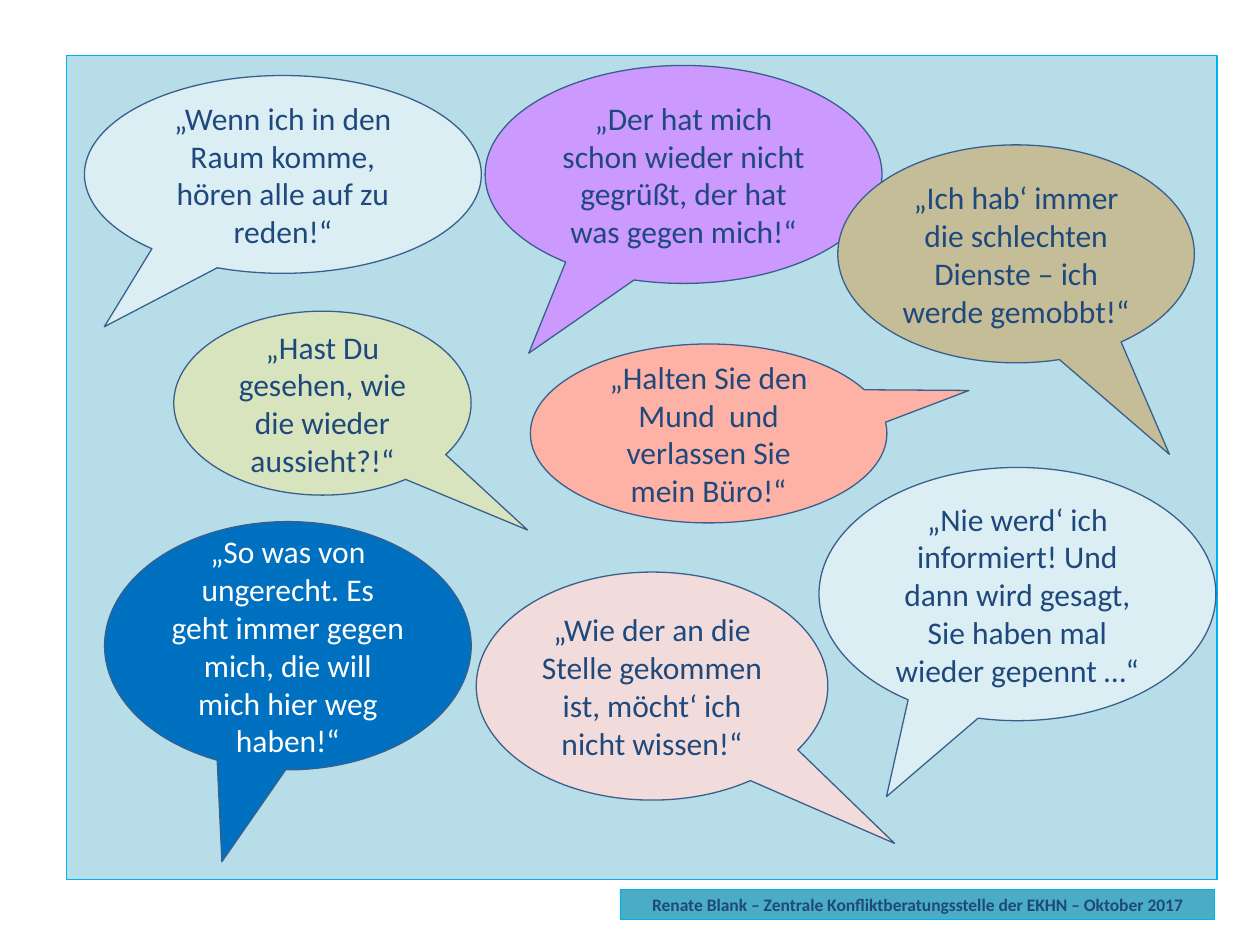
from dataclasses import dataclass

import pptx
import pptx.dml.color
import pptx.enum.shapes
import pptx.enum.text
import pptx.util

COLUMNS, ROWS = 100, 75
SLIDE_WIDTH = pptx.util.Inches(10)
SLIDE_HEIGHT = pptx.util.Inches(7.5)
SHAPES = pptx.enum.shapes.MSO_SHAPE
FONT = "Calibri"
NAVY, WHITE = "1F497D", "FFFFFF"
PALE_BLUE, SKY = "DBEEF4", "00B0F0"
BUBBLE_LINE = "3A5F8C"


@dataclass(frozen=True)
class Area:
    column: float
    row: float
    columns: float
    rows: float


@dataclass(frozen=True)
class Bubble:
    quote: str
    area: Area
    tip: tuple[float, float]
    fill: str
    ink: str = NAVY


BACKDROP = Area(5.3, 4.4, 91.3, 65.4)
FOOTER = Area(49.2, 70.6, 47.2, 2.4)
FOOTER_TEXT = "Renate Blank – Zentrale Konfliktberatungsstelle der EKHN – Oktober 2017"

BUBBLES = [
    Bubble("„Wenn ich in den Raum komme, hören alle auf zu reden!“",
           Area(6.7, 6, 31.5, 15.7), (-0.45, 0.77), PALE_BLUE),
    Bubble("„So was von ungerecht. Es geht immer gegen mich, die will mich hier weg haben!“",
           Area(8.3, 41.4, 29.1, 19.7), (-0.18, 0.87), "0070C0", WHITE),
    Bubble("„Hast Du gesehen, wie die wieder aussieht?!“",
           Area(13.8, 24.7, 23.6, 14.6), (0.69, 0.69), "D7E4BD"),
    Bubble("„Der hat mich schon wieder nicht gegrüßt, der hat was gegen mich!“",
           Area(38.5, 5.2, 31.5, 17.3), (-0.39, 0.82), "CC99FF"),
    Bubble("„Ich hab‘ immer die schlechten Dienste – ich werde gemobbt!“",
           Area(66.5, 11.5, 28.3, 17.3), (0.43, 0.92), "C4BD97"),
    Bubble("„Wie der an die Stelle gekommen ist, möcht‘ ich nicht wissen!“",
           Area(37.8, 45.4, 27.9, 18.1), (0.69, 0.69), "F2DCDB"),
    Bubble("„Nie werd‘ ich informiert! Und dann wird gesagt, Sie haben mal wieder gepennt …“",
           Area(65, 37.1, 31.5, 20.1), (-0.33, 0.8), PALE_BLUE),
    Bubble("„Halten Sie den Mund  und verlassen Sie mein Büro!“",
           Area(42.1, 27.3, 28.3, 14.2), (0.73, -0.24), "FDB2A5"),
]


def color(value: str) -> pptx.dml.color.RGBColor:
    return pptx.dml.color.RGBColor.from_string(value)


def across(columns: float) -> int:
    return round(SLIDE_WIDTH * columns / COLUMNS)


def down(rows: float) -> int:
    return round(SLIDE_HEIGHT * rows / ROWS)


def draw_panel(slide, preset, area: Area, fill: str, line: str, line_width: float):
    panel = slide.shapes.add_shape(
        preset, across(area.column), down(area.row), across(area.columns), down(area.rows)
    )
    panel.shadow.inherit = False
    panel.fill.solid()
    panel.fill.fore_color.rgb = color(fill)
    panel.line.color.rgb = color(line)
    panel.line.width = pptx.util.Pt(line_width)
    return panel


def write(panel, wording: str, size: float, ink: str, bold: bool = False) -> None:
    frame = panel.text_frame
    frame.word_wrap = True
    frame.vertical_anchor = pptx.enum.text.MSO_ANCHOR.MIDDLE
    paragraph = frame.paragraphs[0]
    paragraph.alignment = pptx.enum.text.PP_ALIGN.CENTER
    run = paragraph.add_run()
    run.text = wording
    run.font.name = FONT
    run.font.size = pptx.util.Pt(size)
    run.font.bold = bold
    run.font.color.rgb = color(ink)


def draw_bubble(slide, bubble: Bubble) -> None:
    callout = draw_panel(
        slide, SHAPES.OVAL_CALLOUT, bubble.area, bubble.fill, BUBBLE_LINE, 0.75
    )
    callout.adjustments[0], callout.adjustments[1] = bubble.tip
    write(callout, bubble.quote, 18, bubble.ink)


def main() -> None:
    presentation = pptx.Presentation()
    presentation.slide_width = SLIDE_WIDTH
    presentation.slide_height = SLIDE_HEIGHT
    slide = presentation.slides.add_slide(presentation.slide_layouts[6])
    draw_panel(slide, SHAPES.RECTANGLE, BACKDROP, "B7DEE8", SKY, 0.75)
    for bubble in BUBBLES:
        draw_bubble(slide, bubble)
    footer = draw_panel(slide, SHAPES.RECTANGLE, FOOTER, "4BACC6", SKY, 0.25)
    write(footer, FOOTER_TEXT, 10, NAVY, bold=True)
    presentation.save("out.pptx")


if __name__ == "__main__":
    main()
